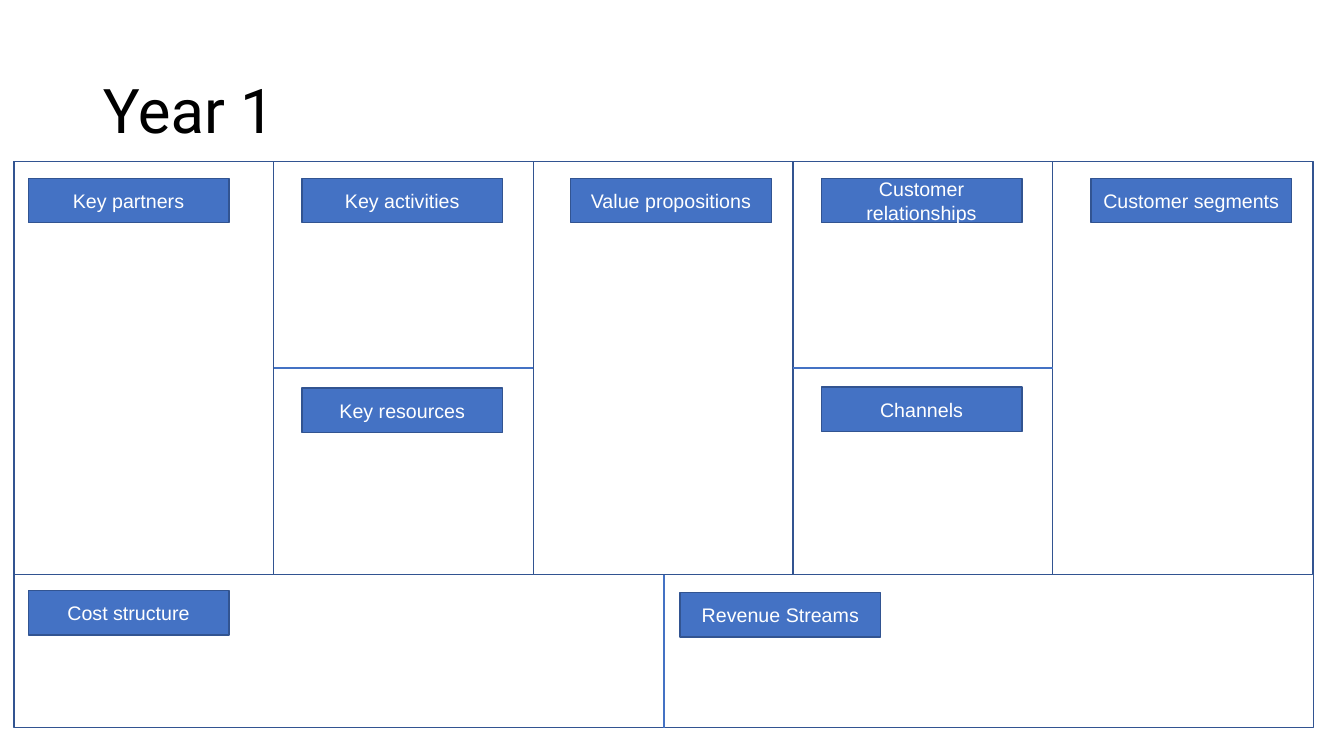
from lxml import etree
from pptx import Presentation
from pptx.dml.color import RGBColor
from pptx.enum.shapes import MSO_CONNECTOR, MSO_SHAPE
from pptx.enum.text import MSO_ANCHOR, MSO_AUTO_SIZE, PP_ALIGN
from pptx.oxml.ns import qn
from pptx.util import Inches, Pt

RECTANGLE = MSO_SHAPE.RECTANGLE
STRAIGHT = MSO_CONNECTOR.STRAIGHT
MIDDLE = MSO_ANCHOR.MIDDLE
NO_AUTOFIT = MSO_AUTO_SIZE.NONE
LEFT = PP_ALIGN.LEFT
CENTER = PP_ALIGN.CENTER

BLUE = RGBColor(0x44, 0x72, 0xC4)
DARK_BLUE = RGBColor(0x32, 0x54, 0x91)
BLACK = RGBColor(0x00, 0x00, 0x00)
WHITE = RGBColor(0xFF, 0xFF, 0xFF)

CANVAS_LEFT, CANVAS_TOP = 0.14, 1.6
CANVAS_WIDTH, CANVAS_HEIGHT = 12.89, 5.62
COLUMN_COUNT = 5
COLUMN_WIDTH = 2.575
COLUMN_HEIGHT = 4.1
MIDDLE_ROW = CANVAS_TOP + COLUMN_HEIGHT / 2
BOTTOM_ROW = CANVAS_TOP + COLUMN_HEIGHT
CANVAS_BOTTOM = CANVAS_TOP + CANVAS_HEIGHT
CANVAS_CENTER = CANVAS_LEFT + CANVAS_WIDTH / 2
LABEL_WIDTH, LABEL_HEIGHT = 1.99, 0.44

presentation = Presentation()
presentation.slide_width = Inches(13.33)
presentation.slide_height = Inches(7.5)
slide = presentation.slides.add_slide(presentation.slide_layouts[5])


def add_box(left, top, width, height):
    shape = slide.shapes.add_shape(
        RECTANGLE, Inches(left), Inches(top), Inches(width), Inches(height)
    )
    shape.shadow.inherit = False
    shape.fill.background()
    shape.line.color.rgb = DARK_BLUE
    shape.line.width = Pt(1)
    return shape


def write_text(shape, text, font_name, size, color, alignment):
    frame = shape.text_frame
    frame.word_wrap = True
    frame.auto_size = NO_AUTOFIT
    frame.vertical_anchor = MIDDLE
    paragraph = frame.paragraphs[0]
    paragraph.alignment = alignment
    run = paragraph.add_run()
    run.text = text
    run.font.name = font_name
    run.font.size = Pt(size)
    run.font.color.rgb = color
    return paragraph


title = slide.shapes.title
title.left, title.top = Inches(0.92), Inches(0.4)
title.width, title.height = Inches(11.5), Inches(1.45)
title_paragraph = write_text(title, "Year 1", "Roboto", 44, BLACK, LEFT)
title_paragraph.line_spacing = 0.9

add_box(CANVAS_LEFT, CANVAS_TOP, CANVAS_WIDTH, CANVAS_HEIGHT)
column_lefts = [CANVAS_LEFT + COLUMN_WIDTH * index for index in range(COLUMN_COUNT)]
for column_left in column_lefts:
    add_box(column_left, CANVAS_TOP, COLUMN_WIDTH, COLUMN_HEIGHT)

dividers = [(CANVAS_CENTER, BOTTOM_ROW, CANVAS_CENTER, CANVAS_BOTTOM)]
for index in (1, 3):
    dividers.append(
        (column_lefts[index + 1], MIDDLE_ROW, column_lefts[index], MIDDLE_ROW)
    )
for divider in dividers:
    connector = slide.shapes.add_connector(
        STRAIGHT, *[Inches(length) for length in divider]
    )
    connector.line.color.rgb = BLUE
    connector.line.width = Pt(1)
    etree.SubElement(connector._element.spPr, qn("a:effectLst"))

labels = [
    ("Key partners", column_lefts[0] + 0.14, CANVAS_TOP + 0.17),
    ("Key activities", column_lefts[1] + 0.28, CANVAS_TOP + 0.17),
    ("Key resources", column_lefts[1] + 0.28, MIDDLE_ROW + 0.2),
    ("Value propositions", column_lefts[2] + 0.37, CANVAS_TOP + 0.17),
    ("Customer relationships", column_lefts[3] + 0.28, CANVAS_TOP + 0.17),
    ("Channels", column_lefts[3] + 0.28, MIDDLE_ROW + 0.19),
    ("Customer segments", column_lefts[4] + 0.38, CANVAS_TOP + 0.17),
    ("Cost structure", CANVAS_LEFT + 0.14, BOTTOM_ROW + 0.16),
    ("Revenue Streams", CANVAS_CENTER + 0.16, BOTTOM_ROW + 0.18),
]
for text, left, top in labels:
    label = add_box(left, top, LABEL_WIDTH, LABEL_HEIGHT)
    label.fill.solid()
    label.fill.fore_color.rgb = BLUE
    write_text(label, text, "Arial", 14, WHITE, CENTER)

presentation.save("out.pptx")
